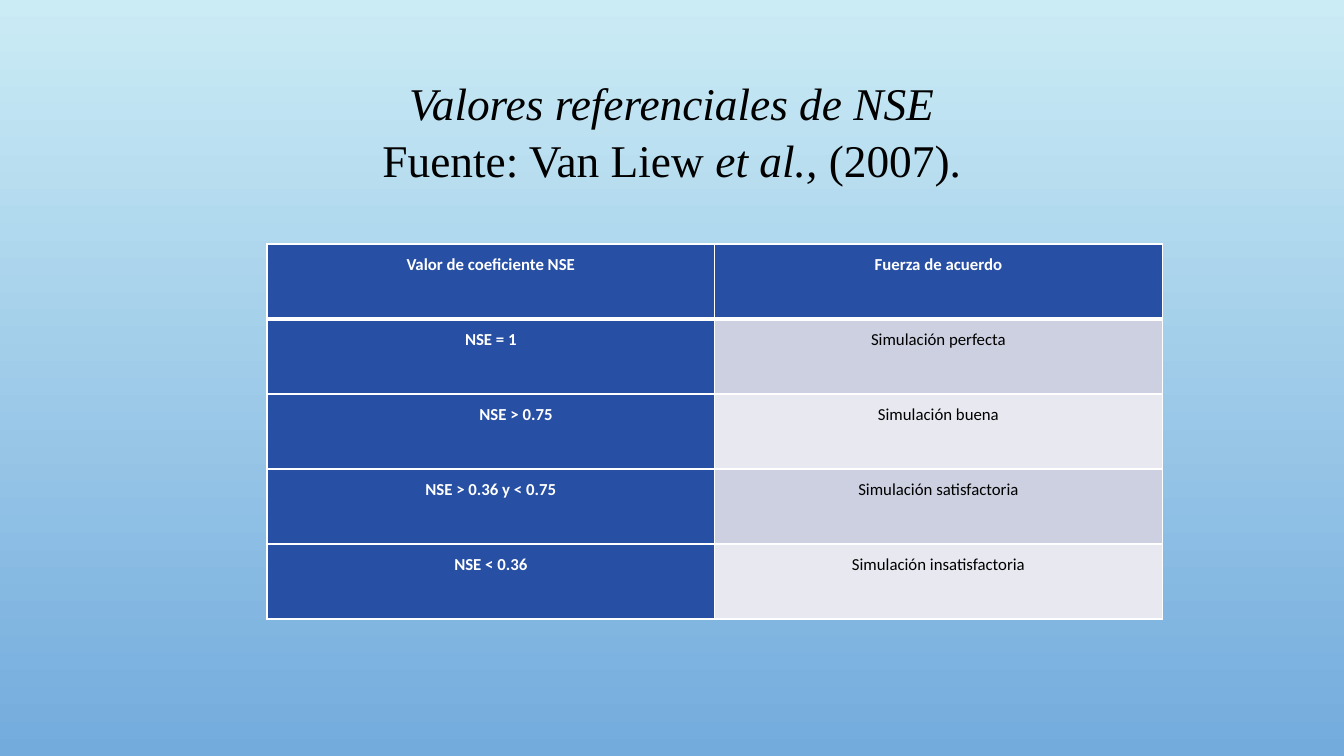
from dataclasses import dataclass

from lxml import etree
from pptx import Presentation, util as u
from pptx.dml.color import RGBColor
from pptx.enum import text
from pptx.oxml.ns import qn


@dataclass(frozen=True)
class Theme:
    sky_top: str = "CBECF5"
    sky_bottom: str = "73ABDD"
    ink: str = "000000"
    paper: str = "FFFFFF"
    header: str = "274FA4"
    bands: tuple = ("CDD0E0", "E8E9F0")
    title_font: str = "Times New Roman"
    body_font: str = "Calibri"
    title_size: float = 32.4
    body_size: float = 12
    thin_line: float = 1
    thick_line: float = 3


class SlideBuilder:
    def __init__(self, page, theme):
        self.page = page
        self.theme = theme

    def background(self):
        fill = self.page.background.fill
        fill.gradient()
        fill.gradient_angle = 270
        colors = (self.theme.sky_top, self.theme.sky_bottom)
        for stop, color, position in zip(fill.gradient_stops, colors, (0, 1)):
            stop.color.rgb = RGBColor.from_string(color)
            stop.position = position

    def span(self, para, words, font, size, color, bold=False, italic=False):
        span = para.add_run()
        span.text = words
        span.font.name = font
        span.font.size = u.Pt(size)
        span.font.color.rgb = RGBColor.from_string(color)
        span.font.bold = bold
        span.font.italic = italic

    def title(self, lines, left, top, width, height):
        box = self.page.shapes.title
        box.left, box.top = u.Cm(left), u.Cm(top)
        box.width, box.height = u.Cm(width), u.Cm(height)
        frame = box.text_frame
        frame.word_wrap = True
        frame.auto_size = text.MSO_AUTO_SIZE.NONE
        frame.vertical_anchor = text.MSO_ANCHOR.MIDDLE
        frame.margin_bottom = u.Cm(1.5)
        para = frame.paragraphs[0]
        para.alignment = text.PP_ALIGN.CENTER
        para.line_spacing = 1.05
        for index, line in enumerate(lines):
            if index:
                para.add_line_break()
            for words, italic in line:
                self.span(para, words, self.theme.title_font,
                          self.theme.title_size, self.theme.ink, italic=italic)

    def border(self, cell, side, width):
        line = etree.SubElement(cell._tc.get_or_add_tcPr(), qn(f"a:ln{side}"),
                                w=str(u.Pt(width)))
        fill = etree.SubElement(line, qn("a:solidFill"))
        etree.SubElement(fill, qn("a:srgbClr"), val=self.theme.paper)

    def cell(self, cell, words, row, column, indent):
        theme = self.theme
        strong = row == 0 or column == 0
        widths = {"L": theme.thin_line, "R": theme.thin_line,
                  "T": theme.thick_line if row == 1 else theme.thin_line,
                  "B": theme.thick_line if row == 0 else theme.thin_line}
        for side, width in widths.items():
            self.border(cell, side, width)
        cell.fill.solid()
        color = theme.header if strong else theme.bands[(row - 1) % 2]
        cell.fill.fore_color.rgb = RGBColor.from_string(color)
        cell.margin_left = cell.margin_right = u.Cm(0.18)
        cell.margin_top = cell.margin_bottom = 0
        para = cell.text_frame.paragraphs[0]
        para.alignment = text.PP_ALIGN.CENTER
        para.line_spacing = 1.5
        if indent:
            para._p.get_or_add_pPr().set("marL", str(u.Cm(indent)))
        self.span(para, words, theme.body_font, theme.body_size,
                  theme.paper if strong else theme.ink, bold=strong)

    def table(self, rows, left, top, column_width, row_height, indents):
        columns = len(rows[0])
        table = self.page.shapes.add_table(
            len(rows), columns, u.Cm(left), u.Cm(top),
            u.Cm(column_width * columns), u.Cm(row_height * len(rows))).table
        for row, values in enumerate(rows):
            for column, words in enumerate(values):
                self.cell(table.cell(row, column), words, row, column,
                          indents.get((row, column), 0))


def main():
    deck = Presentation()
    deck.slide_width, deck.slide_height = u.Cm(33.87), u.Cm(19.05)
    page = deck.slides.add_slide(deck.slide_layouts[5])
    builder = SlideBuilder(page, Theme())
    builder.background()
    builder.title(
        [[("Valores referenciales de NSE", True)],
         [("Fuente: Van Liew ", False), ("et al., ", True), ("(2007).", False)]],
        left=2.54, top=1.73, width=28.78, height=4.44)
    builder.table(
        [("Valor de coeficiente NSE", "Fuerza de acuerdo"),
         ("NSE = 1", "Simulación perfecta"),
         ("NSE > 0.75", "Simulación buena"),
         ("NSE > 0.36 y < 0.75", "Simulación satisfactoria"),
         ("NSE < 0.36", "Simulación insatisfactoria")],
        left=6.73, top=6.15, column_width=11.28, row_height=1.89,
        indents={(2, 0): 1.27})
    deck.save("out.pptx")


if __name__ == "__main__":
    main()
